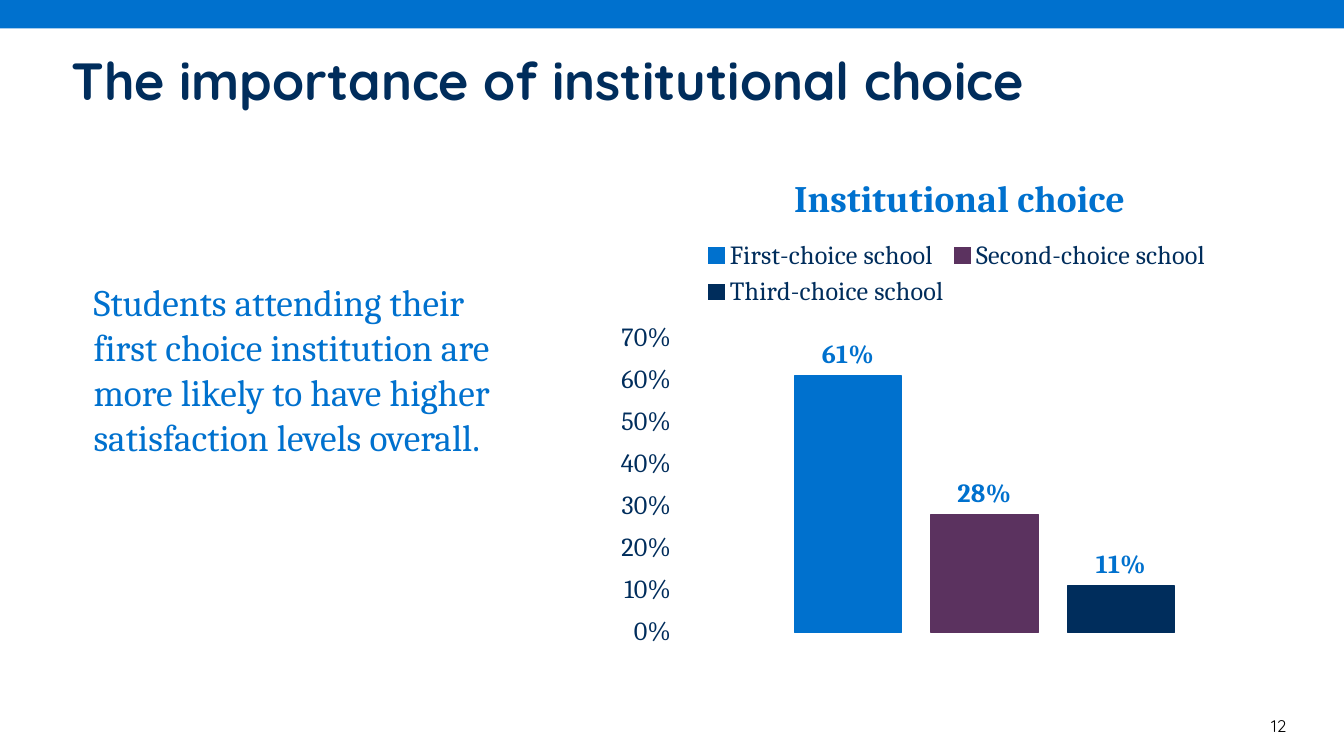
"""Builds the slide on institutional choice with its column chart."""
from pptx import Presentation
from pptx.chart.data import CategoryChartData
from pptx.dml.color import RGBColor
from pptx.enum.chart import XL_CHART_TYPE, XL_LABEL_POSITION, XL_LEGEND_POSITION, XL_TICK_MARK
from pptx.enum.shapes import MSO_SHAPE
from pptx.enum.text import MSO_ANCHOR, PP_ALIGN
from pptx.oxml import parse_xml
from pptx.oxml.ns import nsdecls, qn
from pptx.util import Cm, Pt

BLUE, NAVY, PLUM = "0071CE", "002D5C", "5B325F"


def style_font(font, name, size, color, bold=False):
    font.name = name
    font.size = Pt(size)
    font.bold = bold
    font.color.rgb = RGBColor.from_string(color)


def place_part(part, index, **position):
    for old in part.findall(qn("c:layout")):
        part.remove(old)
    target = '<c:layoutTarget val="inner"/>' if part.tag == qn("c:plotArea") else ""
    modes = "".join(f'<c:{key}Mode val="edge"/>' for key in "xy")
    sizes = "".join(f'<c:{key} val="{value}"/>' for key, value in position.items())
    part.insert(index, parse_xml(
        f'<c:layout {nsdecls("c")}><c:manualLayout>{target}{modes}{sizes}'
        '</c:manualLayout></c:layout>'))


deck = Presentation()
deck.slide_width, deck.slide_height = Cm(25.4), Cm(14.29)
page = deck.slides.add_slide(deck.slide_layouts[6])

band = page.shapes.add_shape(MSO_SHAPE.RECTANGLE, 0, 0, deck.slide_width, Cm(0.54))
band.shadow.inherit = False
band.fill.solid()
band.fill.fore_color.rgb = RGBColor.from_string(BLUE)
band.line.fill.background()

title_box = page.shapes.add_textbox(Cm(1.35), Cm(0.91), Cm(23.22), Cm(1.19))
number_box = page.shapes.add_textbox(Cm(23.19), Cm(13.41), Cm(1.37), Cm(0.64))
message_box = page.shapes.add_textbox(Cm(1.52), Cm(5.16), Cm(8.23), Cm(4.52))
message = ("Students attending their first choice institution are more likely "
           "to have higher satisfaction levels overall.")
for box, text, name, size, color, bold in [
    (title_box, "The importance of institutional choice", "Quicksand", 28, NAVY, True),
    (number_box, "12", "Quicksand", 9, "000000", False),
    (message_box, message, "Cambria", 20, BLUE, False),
]:
    box.text_frame.word_wrap = True
    paragraph = box.text_frame.paragraphs[0]
    paragraph.text = text
    style_font(paragraph.font, name, size, color, bold)

frame = title_box.text_frame
frame.margin_left = frame.margin_right = frame.margin_top = frame.margin_bottom = 0
frame.vertical_anchor = MSO_ANCHOR.MIDDLE
number_box.text_frame.paragraphs[0].alignment = PP_ALIGN.RIGHT

choices = [
    ("First-choice school", 0.61, BLUE),
    ("Second-choice school", 0.28, PLUM),
    ("Third-choice school", 0.11, NAVY),
]
data = CategoryChartData(number_format="0%")
data.categories = ["1"]
for name, share, color in choices:
    data.add_series(name, [share])
chart = page.shapes.add_chart(
    XL_CHART_TYPE.COLUMN_CLUSTERED, Cm(11.48), Cm(2.69), Cm(13.08), Cm(9.75), data).chart
style_font(chart.font, "Cambria", 10, NAVY)

chart.has_title = True
heading = chart.chart_title.text_frame.paragraphs[0]
heading.text = "Institutional choice"
style_font(heading.font, "Cambria", 20, BLUE, True)

chart.has_legend = True
chart.legend.position = XL_LEGEND_POSITION.TOP
chart.legend.include_in_layout = False
style_font(chart.legend.font, "Cambria", 14, NAVY)

chart.category_axis.visible = False
axis = chart.value_axis
axis.minimum_scale, axis.maximum_scale, axis.major_unit = 0, 0.7, 0.1
axis.has_major_gridlines = False
axis.major_tick_mark = axis.minor_tick_mark = XL_TICK_MARK.NONE
axis.format.line.fill.background()
axis.tick_labels.number_format = "0%"
axis.tick_labels.number_format_is_linked = False
style_font(axis.tick_labels.font, "Cambria", 14, NAVY)

plot = chart.plots[0]
plot.vary_by_categories = False
plot.gap_width, plot.overlap = 219, -27
for series, (name, share, color) in zip(plot.series, choices):
    series.format.fill.solid()
    series.format.fill.fore_color.rgb = RGBColor.from_string(color)
    series.format.line.color.rgb = RGBColor.from_string(color)
    series.format.line.width = Pt(0.75)
    labels = series.data_labels
    labels.show_value = True
    labels.number_format = "0%"
    labels.number_format_is_linked = False
    labels.position = XL_LABEL_POSITION.OUTSIDE_END
    style_font(labels.font, "Cambria", 14, BLUE, True)

body = chart.element.find(qn("c:chart"))
place_part(body.find(qn("c:title")), 1, x=0.26, y=0.05)
place_part(body.find(qn("c:legend")), 1, x=0.13, y=0.18, w=0.75, h=0.15)
place_part(body.find(qn("c:plotArea")), 0, x=0.1, y=0.38, w=0.89, h=0.57)

deck.save("out.pptx")
